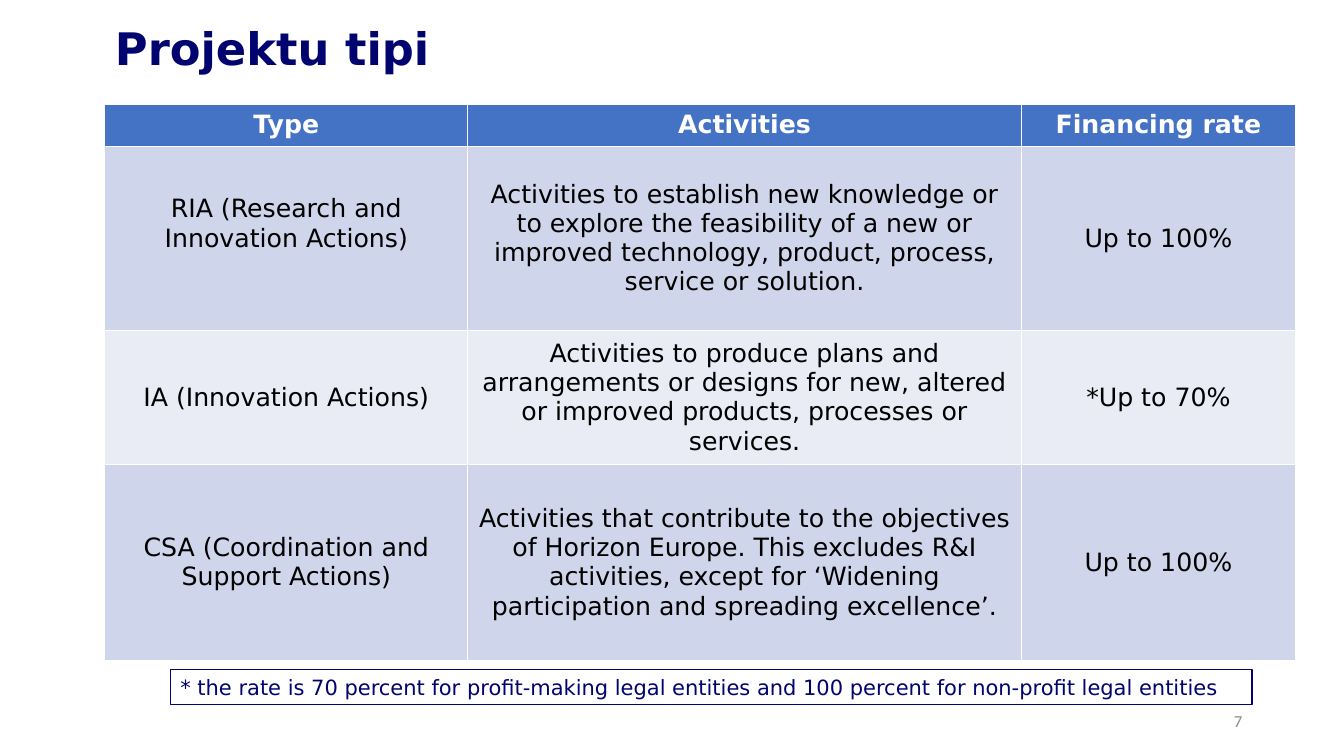
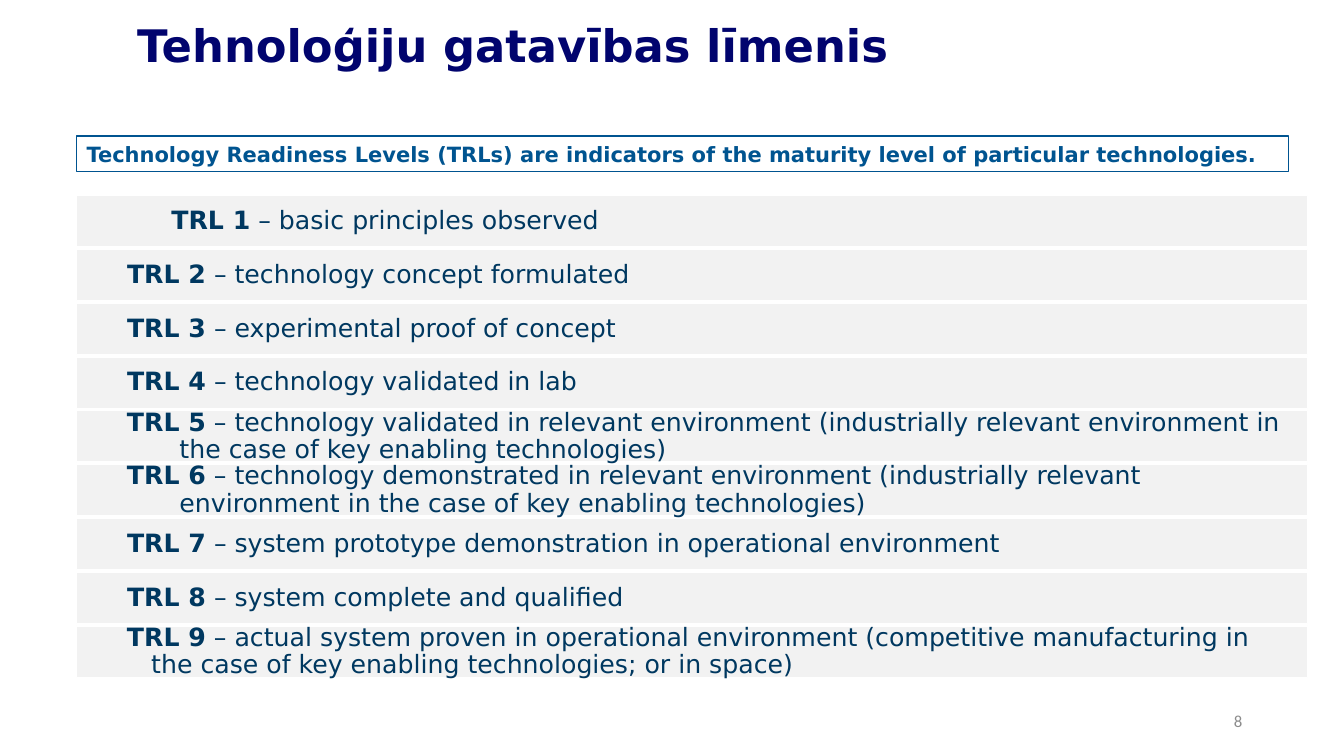
from pptx import Presentation
from pptx.dml.color import RGBColor
from pptx.enum.shapes import MSO_SHAPE
from pptx.enum.text import MSO_ANCHOR, MSO_AUTO_SIZE, PP_ALIGN
from pptx.util import Inches, Pt

COLORS = {
    "navy": "01046E",
    "blue": "005490",
    "deep": "003860",
    "gray": "8C8C8C",
    "pale": "F2F2F2",
    "white": "FFFFFF",
    "black": "000000",
    "head": "4472C4",
    "odd": "CFD5EA",
    "even": "E9EBF5",
}
SANS = "DejaVu Sans"

WIDTHS = [3.6, 5.49, 2.72]
HEIGHTS = [0.41, 1.83, 1.33, 1.94]
ROWS = [
    ["Type", "Activities", "Financing rate"],
    [
        "RIA (Research and Innovation Actions)",
        "Activities to establish new knowledge or to explore the feasibility of a new or "
        "improved technology, product, process, service or solution.",
        "Up to 100%",
    ],
    [
        "IA (Innovation Actions)",
        "Activities to produce plans and arrangements or designs for new, altered or "
        "improved products, processes or services.",
        "*Up to 70%",
    ],
    [
        "CSA (Coordination and Support Actions)",
        "Activities that contribute to the objectives of Horizon Europe. This excludes R&I "
        "activities, except for ‘Widening participation and spreading excellence’.",
        "Up to 100%",
    ],
]

LEVELS = [
    ("basic principles observed", 0.88, 0.88),
    ("technology concept formulated", 0.44, 0.44),
    ("experimental proof of concept", 0.44, 0.44),
    ("technology validated in lab", 0.44, 0.44),
    ("technology validated in relevant environment (industrially relevant environment in "
     "the case of key enabling technologies)", 0.44, 0.96),
    ("technology demonstrated in relevant environment (industrially relevant "
     "environment in the case of key enabling technologies)", 0.44, 0.96),
    ("system prototype demonstration in operational environment", 0.44, 0.44),
    ("system complete and qualified", 0.44, 0.44),
    ("actual system proven in operational environment (competitive manufacturing in "
     "the case of key enabling technologies; or in space)", 0.44, 0.68),
]
FIRST, STEP = 1.94, 4.27 / 8


def color(name):
    return RGBColor.from_string(COLORS[name])


def style(run, size, tone, bold=False, face=SANS):
    font = run.font
    font.name, font.size, font.bold = face, Pt(size), bold
    font.color.rgb = color(tone)


def write(frame, text, size, tone, bold=False, face=SANS, align=PP_ALIGN.LEFT):
    frame.text = text
    para = frame.paragraphs[0]
    para.alignment = align
    for run in para.runs:
        style(run, size, tone, bold, face)
    return para


def place(shape, box):
    shape.left, shape.top, shape.width, shape.height = map(Inches, box)


def add_page(deck, title, box, anchor, number):
    slide = deck.slides.add_slide(deck.slide_layouts[5])
    place(slide.shapes.title, box)
    frame = slide.shapes.title.text_frame
    frame.word_wrap = True
    frame.auto_size = MSO_AUTO_SIZE.NONE
    frame.vertical_anchor = anchor
    write(frame, title, 32, "navy", True).line_spacing = 0.9
    label = slide.shapes.add_textbox(*map(Inches, (9.42, 6.95, 3, 0.4))).text_frame
    label.word_wrap = True
    label.vertical_anchor = MSO_ANCHOR.MIDDLE
    write(label, str(number), 12, "gray", face="Calibri", align=PP_ALIGN.RIGHT)
    return slide


def add_rect(slide, box, line, fill=None):
    rect = slide.shapes.add_shape(MSO_SHAPE.RECTANGLE, *map(Inches, box))
    rect.shadow.inherit = False
    rect.line.color.rgb = color(line)
    rect.line.width = Pt(1)
    if fill:
        rect.fill.solid()
        rect.fill.fore_color.rgb = color(fill)
    else:
        rect.fill.background()
    rect.text_frame.word_wrap = True
    return rect.text_frame


def add_note(slide, box, text, tone, bold=False):
    frame = add_rect(slide, box, tone)
    frame.vertical_anchor = MSO_ANCHOR.TOP
    write(frame, text, 15, tone, bold)


def add_level(slide, index, text, start, hang):
    frame = add_rect(slide, (0.76, FIRST + index * STEP, 12.21, 0.51), "white", "pale")
    frame.vertical_anchor = MSO_ANCHOR.MIDDLE
    frame.margin_left, frame.margin_right = Inches(0.06), Inches(0.2)
    frame.margin_top = frame.margin_bottom = Inches(0.04)
    para = write(frame, f"TRL {index + 1}", 18, "deep", True)
    para.line_spacing = 0.9
    props = para._p.get_or_add_pPr()
    props.set("marL", str(Inches(hang)))
    props.set("indent", str(Inches(start) - Inches(hang)))
    run = para.add_run()
    run.text = f" – {text}"
    style(run, 18, "deep")


def add_grid(slide):
    box = map(Inches, (1.04, 1.04, sum(WIDTHS), sum(HEIGHTS)))
    table = slide.shapes.add_table(len(ROWS), len(WIDTHS), *box).table
    for column, width in zip(table.columns, WIDTHS):
        column.width = Inches(width)
    for i, (row, height, texts) in enumerate(zip(table.rows, HEIGHTS, ROWS)):
        row.height = Inches(height)
        top = i == 0
        fill = "head" if top else "odd" if i % 2 else "even"
        for cell, text in zip(row.cells, texts):
            cell.fill.solid()
            cell.fill.fore_color.rgb = color(fill)
            cell.vertical_anchor = MSO_ANCHOR.TOP if top else MSO_ANCHOR.MIDDLE
            write(cell.text_frame, text, 18, "white" if top else "black", top,
                  align=PP_ALIGN.CENTER)
    table.cell(1, 0).margin_bottom = Inches(0.34)


def add_types(deck):
    slide = add_page(deck, "Projektu tipi", (1.04, -0.22, 11.5, 1.45), MSO_ANCHOR.MIDDLE, 7)
    add_grid(slide)
    add_note(slide, (1.69, 6.64, 10.73, 0.35),
             "* the rate is 70 percent for profit-making legal entities "
             "and 100 percent for non-profit legal entities", "navy")


def add_scale(deck):
    slide = add_page(deck, "Tehnoloģiju gatavības līmenis", (1.26, 0.19, 9.34, 1.13),
                     MSO_ANCHOR.TOP, 8)
    for index, level in enumerate(LEVELS):
        add_level(slide, index, *level)
    add_note(slide, (0.76, 1.35, 12.02, 0.35),
             "Technology Readiness Levels (TRLs) are indicators of the maturity level "
             "of particular technologies.", "blue", True)


def main():
    deck = Presentation()
    deck.slide_width, deck.slide_height = Inches(13.33), Inches(7.5)
    add_types(deck)
    add_scale(deck)
    deck.save("out.pptx")


if __name__ == "__main__":
    main()
